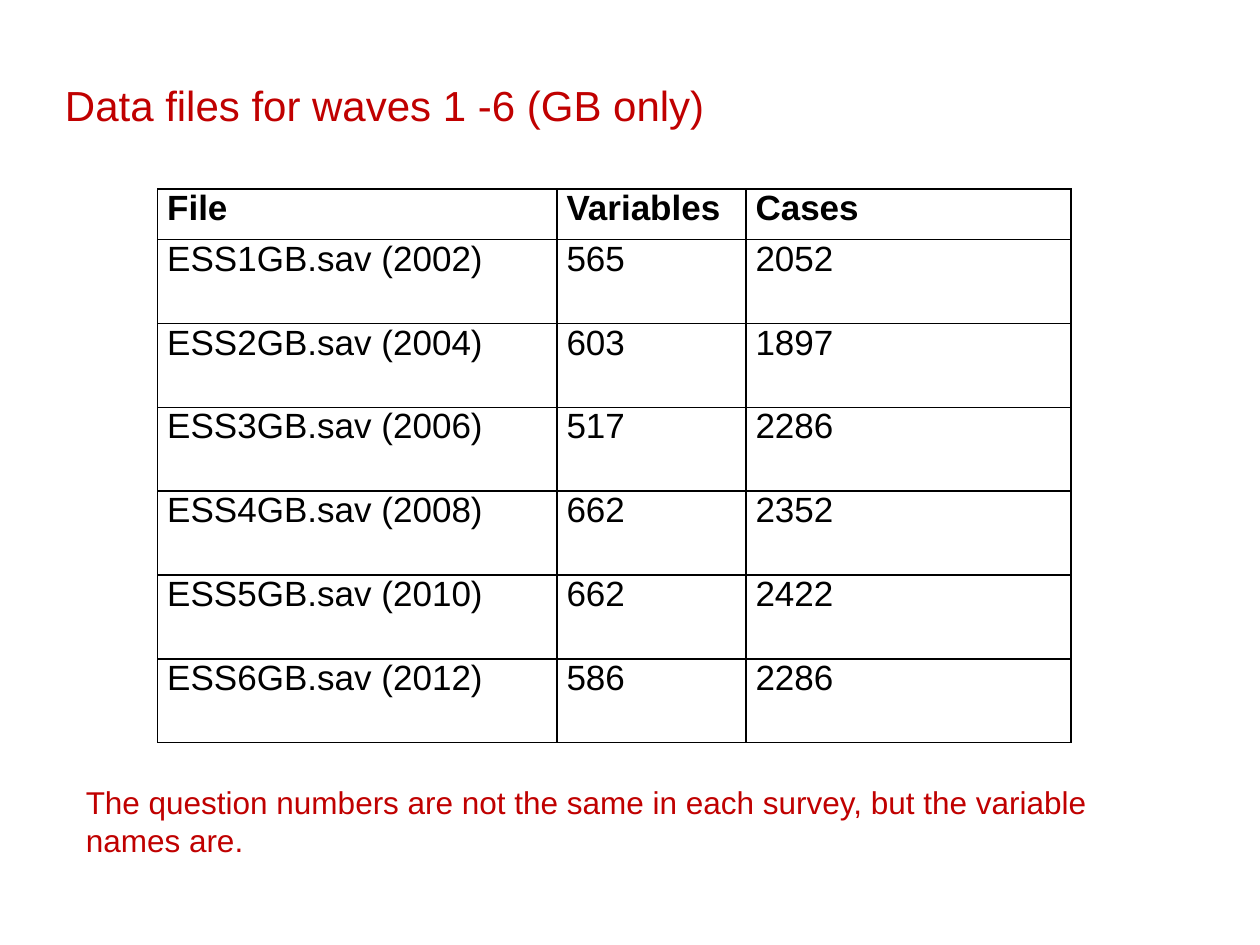
from lxml import etree
from pptx import Presentation
from pptx.dml.color import RGBColor
from pptx.enum.text import MSO_ANCHOR, MSO_AUTO_SIZE
from pptx.oxml.ns import qn
from pptx.util import Cm, Pt

BLACK = RGBColor(0x00, 0x00, 0x00)
RED = RGBColor(0xC0, 0x00, 0x00)
MIDDLE = MSO_ANCHOR.MIDDLE
TOP = MSO_ANCHOR.TOP
FIT_SHAPE = MSO_AUTO_SIZE.SHAPE_TO_FIT_TEXT

HEADINGS = ("File", "Variables", "Cases")
WAVES = (
    (565, 2052),
    (603, 1897),
    (517, 2286),
    (662, 2352),
    (662, 2422),
    (586, 2286),
)
COLUMN_WIDTHS = (8.05, 3.81, 6.55)
HEADING_HEIGHT = 1.02
WAVE_HEIGHT = 1.69


class SlideBuilder:
    """Holds the text style and the current slide, and adds elements to it."""

    def __init__(self, slide, font="Arial"):
        self.slide = slide
        self.font = font

    def format_text(self, text_frame, size, color, bold=False):
        for paragraph in text_frame.paragraphs:
            for run in paragraph.runs:
                run.font.name = self.font
                run.font.size = Pt(size)
                run.font.bold = bold
                run.font.color.rgb = color

    def add_text(self, text, left, top, width, height, size, wrap=True, anchor=TOP):
        shape = self.slide.shapes.add_textbox(Cm(left), Cm(top), Cm(width), Cm(height))
        text_frame = shape.text_frame
        text_frame.text = text
        text_frame.word_wrap = wrap
        text_frame.auto_size = FIT_SHAPE
        text_frame.vertical_anchor = anchor
        self.format_text(text_frame, size, RED)

    def add_borders(self, cell):
        properties = cell._tc.get_or_add_tcPr()
        for side in ("a:lnL", "a:lnR", "a:lnT", "a:lnB"):
            line = etree.SubElement(properties, qn(side), w=str(Pt(1)))
            fill = etree.SubElement(line, qn("a:solidFill"))
            etree.SubElement(fill, qn("a:srgbClr"), val=str(BLACK))

    def add_table(self, rows, left, top, widths, heights):
        frame = self.slide.shapes.add_table(
            len(rows), len(widths), Cm(left), Cm(top), Cm(sum(widths)), Cm(sum(heights))
        )
        table = frame.table
        table.first_row = False
        table.horz_banding = False
        for column, width in zip(table.columns, widths):
            column.width = Cm(width)
        for index, (row, height, values) in enumerate(zip(table.rows, heights, rows)):
            row.height = Cm(height)
            for cell, value in zip(row.cells, values):
                cell.text_frame.text = str(value)
                cell.margin_left = cell.margin_right = Cm(0.19)
                cell.margin_top = cell.margin_bottom = 0
                self.add_borders(cell)
                cell.fill.background()
                self.format_text(cell.text_frame, 20, BLACK, bold=index == 0)


def main():
    presentation = Presentation()
    presentation.slide_width = Cm(25.4)
    presentation.slide_height = Cm(19.05)
    builder = SlideBuilder(presentation.slides.add_slide(presentation.slide_layouts[6]))

    rows = [HEADINGS]
    for number, counts in enumerate(WAVES, start=1):
        rows.append((f"ESS{number}GB.sav ({2000 + 2 * number})", *counts))
    heights = [HEADING_HEIGHT] + [WAVE_HEIGHT] * len(WAVES)
    builder.add_table(rows, 3.18, 3.81, COLUMN_WIDTHS, heights)

    builder.add_text(
        "Data files for waves 1 -6 (GB only)",
        1.06, 1.48, 14, 1.28, 24, wrap=False, anchor=MIDDLE,
    )
    builder.add_text(
        "The question numbers are not the same in each survey, "
        "but the variable names are.",
        1.48, 15.66, 21.8, 1.8, 18,
    )
    presentation.save("out.pptx")


if __name__ == "__main__":
    main()
